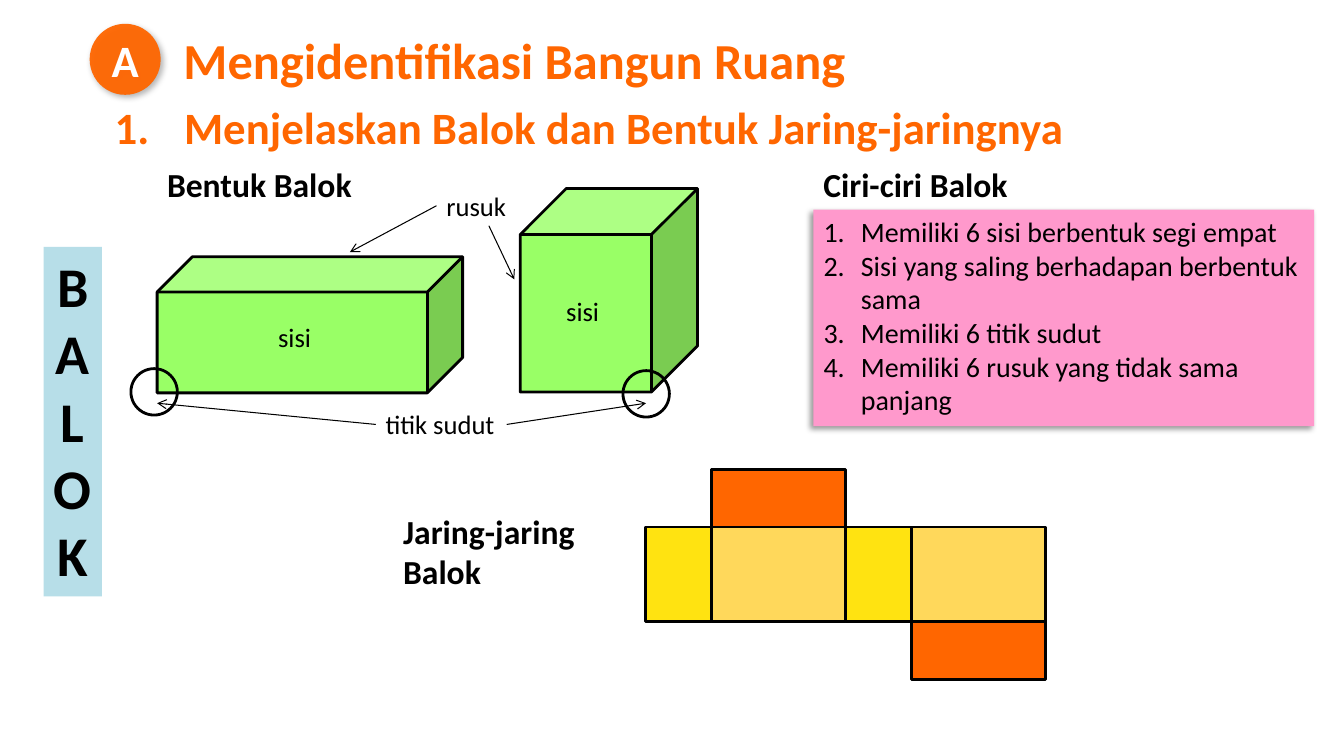
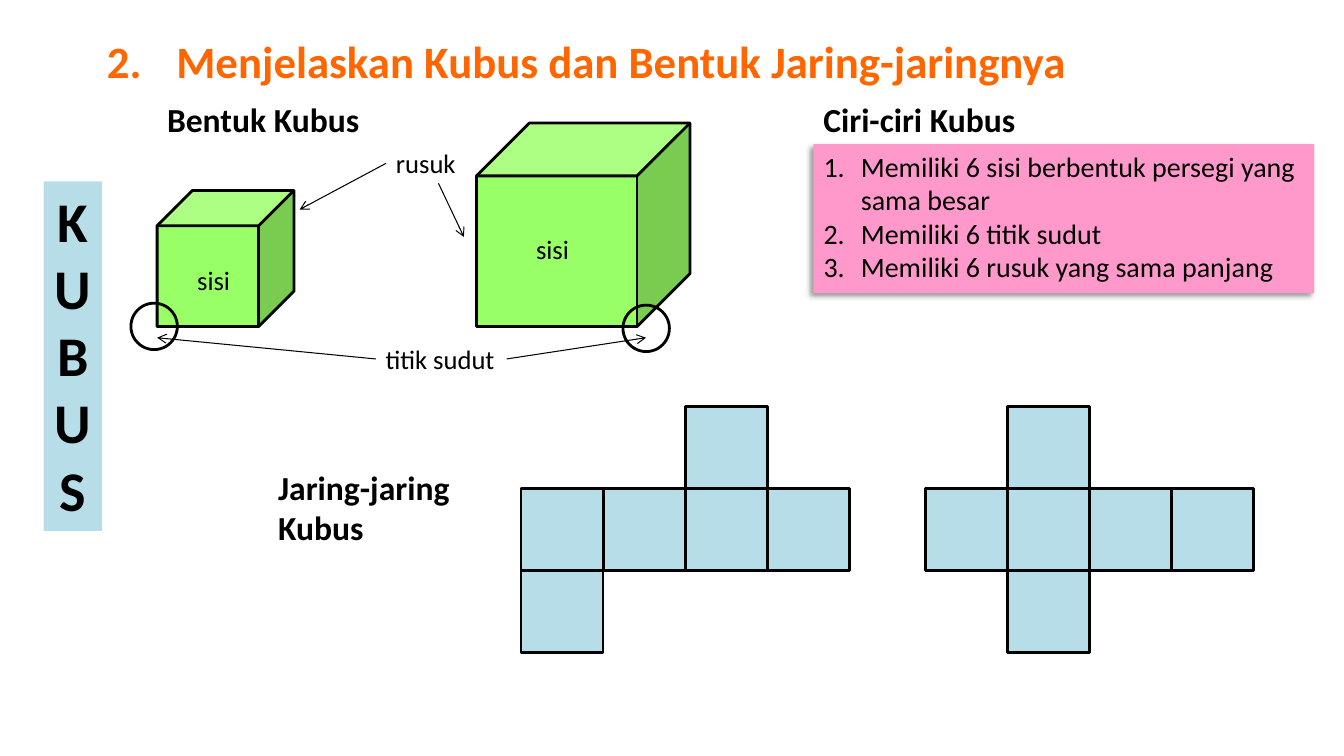
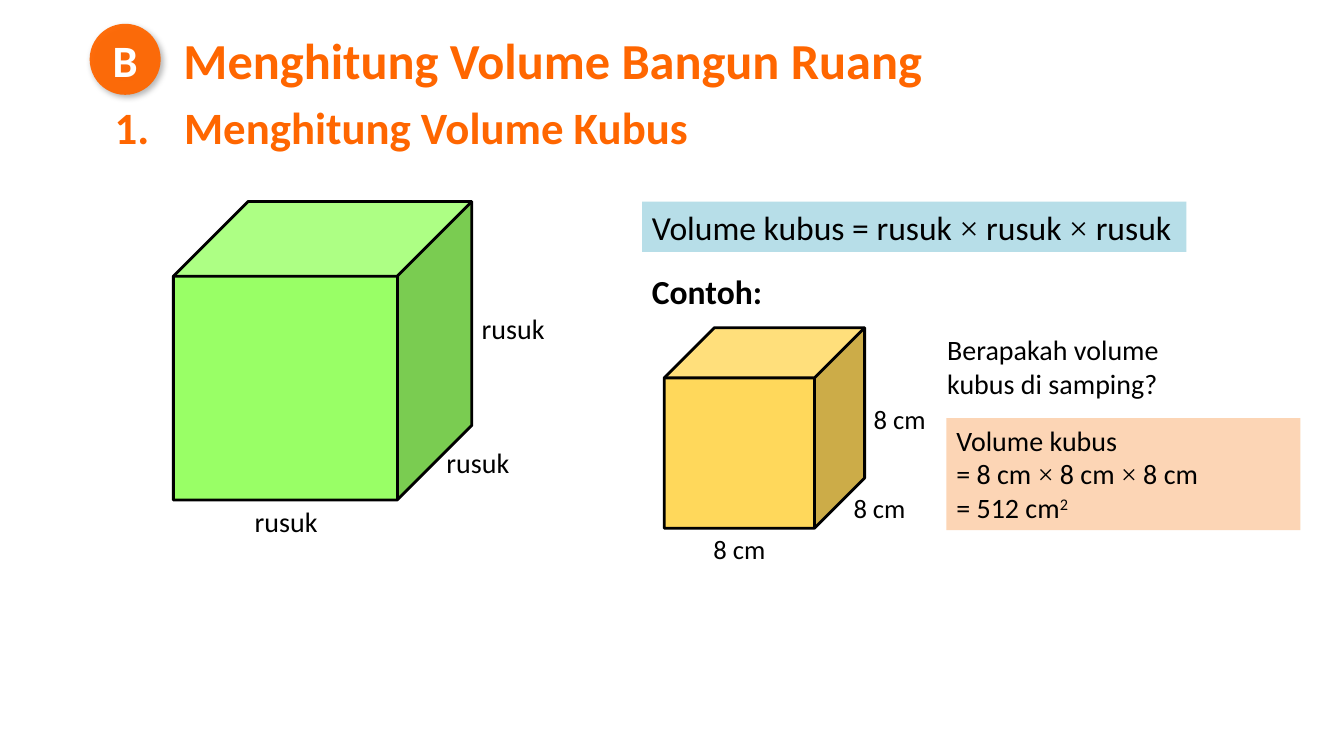
from itertools import groupby

from lxml import etree
from pptx import Presentation
from pptx.dml.color import RGBColor
from pptx.enum.shapes import MSO_CONNECTOR, MSO_SHAPE
from pptx.enum.text import MSO_ANCHOR, MSO_AUTO_SIZE, PP_ALIGN
from pptx.oxml.ns import qn
from pptx.util import Cm, Pt

RECTANGLE, OVAL, CUBE = MSO_SHAPE.RECTANGLE, MSO_SHAPE.OVAL, MSO_SHAPE.CUBE
STRAIGHT = MSO_CONNECTOR.STRAIGHT
TOP, MIDDLE = MSO_ANCHOR.TOP, MSO_ANCHOR.MIDDLE
LEFT, CENTER = PP_ALIGN.LEFT, PP_ALIGN.CENTER
FIXED = MSO_AUTO_SIZE.NONE

ORANGE, GREEN, PINK, BLUE = "FF6600", "99FF66", "FF99CC", "B7DEE8"
YELLOW, GOLD, PEACH = "FFE311", "FFD85B", "FCD5B5"
BLACK, WHITE = "000000", "FFFFFF"
BADGE_SHADOW = (30, 4.5, 2.6, 53)
FEATURE_SHADOW = (40, 4, 3, 135)


def colour(value):
    return RGBColor.from_string(value)


def apply(target, values):
    for name, value in values.items():
        setattr(target, name, value)


def child(parent, tag, **attributes):
    element = etree.SubElement(parent, qn(tag))
    for name, value in attributes.items():
        element.set(name, str(value))
    return element


class Lesson:
    font = "Calibri"
    symbol_font = "Times New Roman"
    outline = 2
    heading_tab = 1.75
    list_indent = 0.94

    def __init__(self):
        self.deck = Presentation()
        apply(self.deck, {"slide_width": Cm(33.87), "slide_height": Cm(19.05)})
        self.slide = None

    def new_slide(self, layout):
        self.slide = self.deck.slides.add_slide(self.deck.slide_layouts[layout])

    def place(self, item, left, top, width, height):
        apply(item, {"left": Cm(left), "top": Cm(top),
                     "width": Cm(width), "height": Cm(height)})

    def set_text(self, item, lines, size, color=BLACK, bold=False, align=LEFT,
                 anchor=TOP, margins=None, tab=None, numbered=False):
        frame = item.text_frame
        apply(frame, {"word_wrap": True, "auto_size": FIXED, "vertical_anchor": anchor})
        apply(frame, {"margin_" + side: Cm(value)
                      for side, value in (margins or {}).items()})
        for index, line in enumerate(lines):
            paragraph = frame.add_paragraph() if index else frame.paragraphs[0]
            apply(paragraph, {"alignment": align, "space_before": Pt(0)})
            properties = paragraph._p.get_or_add_pPr()
            if numbered:
                properties.set("marL", str(Cm(self.list_indent)))
                properties.set("indent", str(-Cm(self.list_indent)))
                child(properties, "a:buFont", typeface="+mj-lt")
                child(properties, "a:buAutoNum", type="arabicPeriod")
            if tab:
                stops = child(properties, "a:tabLst")
                child(stops, "a:tab", pos=Cm(tab), algn="l")
            base, _, power = line.partition("^")
            pieces = [("".join(letters), is_symbol, False)
                      for is_symbol, letters in groupby(base, lambda c: c == "×")]
            if power:
                pieces.append((power, False, True))
            for text, is_symbol, is_power in pieces:
                run = paragraph.add_run()
                run.text = text
                apply(run.font, {"name": self.symbol_font if is_symbol else self.font,
                                 "size": Pt(size), "bold": bold})
                run.font.color.rgb = colour(color)
                if is_power:
                    run._r.get_or_add_rPr().set("baseline", "30000")

    def shadow(self, item, alpha, blur, distance, angle):
        item.shadow.inherit = False
        effects = item._element.spPr.find(qn("a:effectLst"))
        outer = child(effects, "a:outerShdw", blurRad=Pt(blur), dist=Pt(distance),
                      dir=angle * 60000, algn="tl", rotWithShape=0)
        child(child(outer, "a:srgbClr", val=BLACK), "a:alpha", val=alpha * 1000)

    def fill(self, item, color):
        item.fill.solid()
        item.fill.fore_color.rgb = colour(color)

    def shape(self, kind, left, top, width, height, color=None, outlined=True):
        item = self.slide.shapes.add_shape(
            kind, Cm(left), Cm(top), Cm(width), Cm(height))
        item.shadow.inherit = False
        if color:
            self.fill(item, color)
        else:
            item.fill.background()
        if outlined:
            item.line.color.rgb = colour(BLACK)
            item.line.width = Pt(self.outline)
        else:
            item.line.fill.background()
        return item

    def cube(self, left, top, width, height, color=GREEN, depth=0.25):
        self.shape(CUBE, left, top, width, height, color).adjustments[0] = depth

    def panel(self, left, top, width, height, color, lines, size, **style):
        item = self.shape(RECTANGLE, left, top, width, height, color, False)
        self.set_text(item, lines, size, **style)

    def text(self, left, top, width, height, line, size, **style):
        item = self.slide.shapes.add_textbox(Cm(left), Cm(top), Cm(width), Cm(height))
        self.set_text(item, [line], size, **style)
        return item

    def label(self, left, top, line, width=2.03, size=19):
        return self.text(left, top, width, 1.07, line, size, margins={"right": 0})

    def caption(self, left, top, line, width=5.6, height=1.27):
        self.text(left, top, width, height, line, 24, bold=True)

    def arrow(self, x1, y1, x2, y2, source=None, side=None):
        line = self.slide.shapes.add_connector(STRAIGHT, Cm(x1), Cm(y1), Cm(x2), Cm(y2))
        if source is not None:
            line.begin_connect(source, side)
        line.line.color.rgb = colour(BLACK)
        line.line.width = Pt(0.75)
        child(line._element.spPr.find(qn("a:ln")), "a:tailEnd", type="arrow")
        child(line._element.spPr, "a:effectLst")

    def title(self, left, top, width, height, line, size, tab=None):
        item = self.slide.shapes.title
        self.place(item, left, top, width, height)
        self.set_text(item, [line], size, color=ORANGE, bold=True, tab=tab)

    def section(self, letter, title, heading):
        self.title(4.37, 0.6, 22, 1.8, title, 36)
        badge = self.shape(OVAL, 2.26, 0.6, 1.79, 1.79, ORANGE, False)
        tint = badge._element.spPr.find(qn("a:solidFill"))[0]
        child(tint, "a:alpha", val=95000)
        self.shadow(badge, *BADGE_SHADOW)
        self.set_text(badge, [letter], 32, color=WHITE, bold=True, align=CENTER,
                      anchor=MIDDLE,
                      margins=dict.fromkeys(("left", "right", "top", "bottom"), 0))
        self.text(2.64, 2.39, 26, 1.63, heading, 32, color=ORANGE, bold=True,
                  tab=self.heading_tab)

    def features(self, left, top, width, height, lines):
        item = self.slide.placeholders[1]
        self.place(item, left, top, width, height)
        self.fill(item, PINK)
        self.shadow(item, *FEATURE_SHADOW)
        self.set_text(item, lines, 20, numbered=True)

    def solid(self, name, top, features, features_height, cubes, faces, edge, net_label):
        self.caption(3.96, top, f"Bentuk {name}")
        self.caption(20.5, top, f"Ciri-ciri {name}")
        self.features(20.5, top + 1.27, 12.62, features_height, features)
        for left, offset, width, height in cubes:
            self.cube(left, top + offset, width, height, depth=0.26)
        for left, offset in faces:
            self.label(left, top + offset, "sisi")

        edge_left, edge_top = edge[0], top + edge[1]
        edge_label = self.label(edge_left, edge_top, "rusuk")
        self.arrow(edge_left + 1.32, edge_top + 1.04, edge_left + 1.96, edge_top + 2.39)
        self.arrow(edge_left, edge_top + 0.53, edge_left - 2.18, edge_top + 1.7,
                   edge_label, 1)

        corner = self.label(9.47, top + 6.15, "titik sudut", 3.3)
        for start, end, side in ((12.77, 16.28, 3), (9.47, 3.96, 1)):
            self.arrow(start, top + 6.68, end, top + 6.15, corner, side)
        for left, offset in ((3.3, 5.28), (15.7, 5.33)):
            self.shape(OVAL, left, top + offset, 1.17, 1.17)

        self.panel(1.1, top + 2.21, 1.47, 8.81, BLUE, list(name.upper()), 40,
                   bold=True, align=CENTER, margins={"left": 0, "right": 0})
        self.caption(*net_label, f"Jaring-jaring {name}", height=2.39)

    def cuboid_net(self, left, top, short, long, height, flap):
        lefts = []
        for width, color in ((short, YELLOW), (long, GOLD)) * 2:
            lefts.append(left)
            self.shape(RECTANGLE, left, top, width, height, color)
            left += width
        for column, flap_top in ((1, top - flap), (3, top + height)):
            self.shape(RECTANGLE, lefts[column], flap_top, long, flap, ORANGE)

    def cube_net(self, left, top, side, flaps):
        row = [(column, 0) for column in range(4)]
        for column, level in row + flaps:
            self.shape(RECTANGLE, left + column * side, top + level * side,
                       side, side, BLUE)


def main():
    lesson = Lesson()

    lesson.new_slide(1)
    lesson.section("A", "Mengidentifikasi Bangun Ruang",
                   "1.\tMenjelaskan Balok dan Bentuk Jaring-jaringnya")
    lesson.solid(
        "Balok", 4.01,
        ["Memiliki 6 sisi berbentuk segi empat",
         "Sisi yang saling berhadapan berbentuk sama",
         "Memiliki 6 titik sudut",
         "Memiliki 6 rusuk yang tidak sama panjang"],
        5.46,
        cubes=((3.96, 2.46, 7.7, 3.43), (13.11, 0.74, 4.47, 5.13)),
        faces=((14.02, 3.3), (6.76, 3.96)),
        edge=(11, 0.64), net_label=(9.91, 12.75))
    lesson.cuboid_net(16.26, 13.28, 1.67, 3.37, 2.39, 1.45)

    lesson.new_slide(1)
    lesson.title(2.44, 0.71, 26, 1.63,
                 "2.\tMenjelaskan Kubus dan Bentuk Jaring-jaringnya", 32,
                 lesson.heading_tab)
    lesson.solid(
        "Kubus", 2.36,
        ["Memiliki 6 sisi berbentuk persegi yang sama besar",
         "Memiliki 6 titik sudut",
         "Memiliki 6 rusuk yang sama panjang"],
        3.76,
        cubes=((3.96, 2.44, 3.45, 3.43), (12.01, 0.74, 5.38, 5.13)),
        faces=((13.26, 3.38), (4.72, 4.17)),
        edge=(9.73, 1.22), net_label=(6.76, 11.63))
    for left, flaps in ((13.13, [(2, -1), (0, 1)]), (23.32, [(1, -1), (1, 1)])):
        lesson.cube_net(left, 12.31, 2.07, flaps)

    lesson.new_slide(5)
    lesson.section("B", "Menghitung Volume Bangun Ruang", "1.\tMenghitung Volume Kubus")
    lesson.cube(4.37, 5.08, 7.52, 7.52)
    for left, top in ((6.17, 12.6), (11, 11.1), (11.89, 7.72)):
        lesson.label(left, top, "rusuk", 2.1, 20)
    lesson.panel(16.18, 5.08, 13.72, 1.27, BLUE,
                 ["Volume kubus = rusuk × rusuk × rusuk"], 24)
    lesson.caption(16.18, 6.71, "Contoh:")
    lesson.cube(16.74, 8.26, 5.05, 5.05, GOLD)
    for left, top in ((17.73, 13.31), (21.26, 12.27), (21.77, 10.03)):
        lesson.label(left, top, "8 cm")
    lesson.text(23.62, 8.26, 6.8, 1.96, "Berapakah volume kubus di samping?", 20)
    lesson.panel(23.85, 10.54, 8.92, 2.82, PEACH,
                 ["Volume kubus", "= 8 cm × 8 cm × 8 cm", "= 512 cm^2"], 20)

    lesson.deck.save("out.pptx")


if __name__ == "__main__":
    main()
